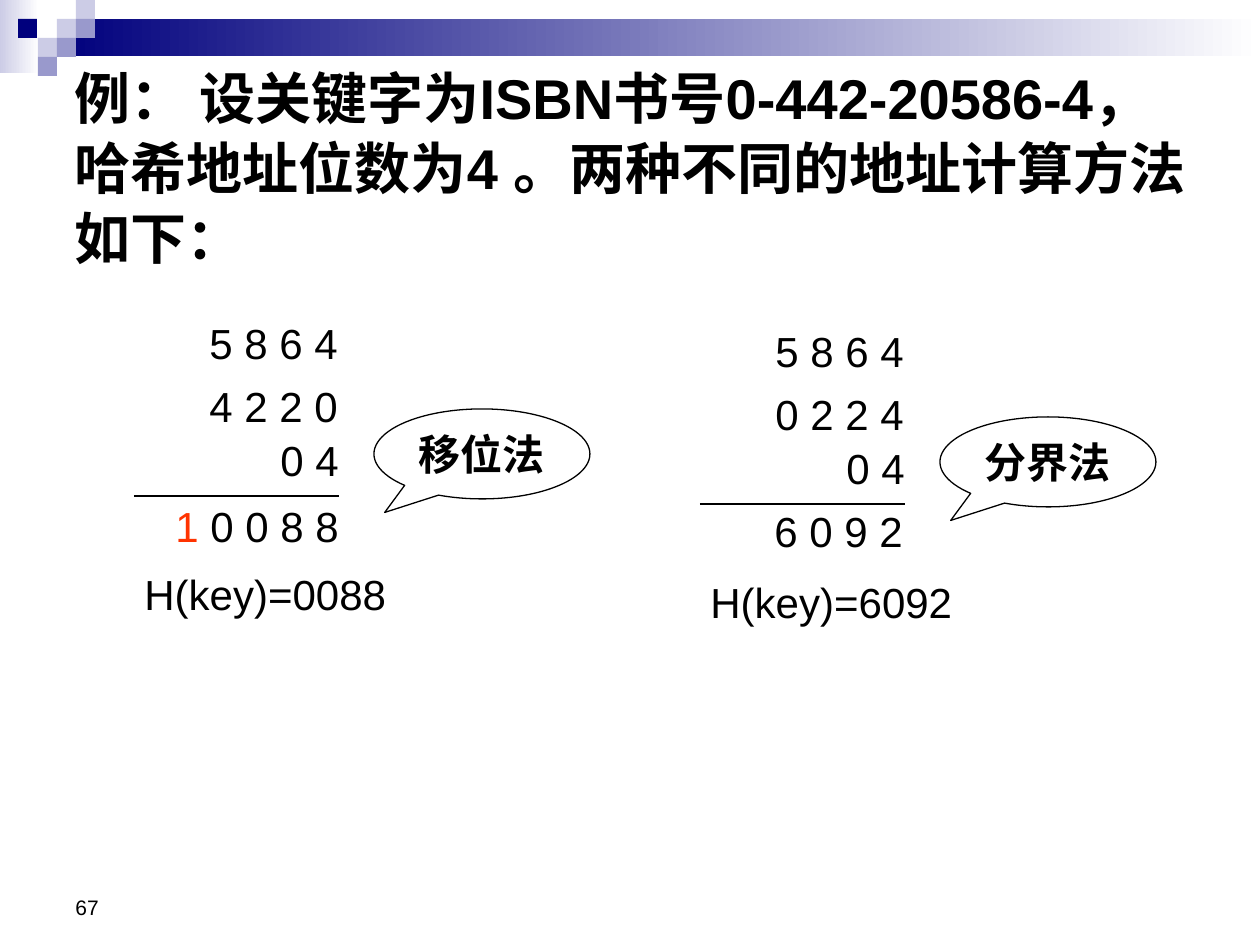
from lxml import etree
from pptx import Presentation
from pptx.dml.color import RGBColor
from pptx.enum.shapes import MSO_CONNECTOR, MSO_SHAPE
from pptx.enum.text import MSO_ANCHOR, PP_ALIGN
from pptx.oxml.ns import qn
from pptx.util import Emu, Pt

SCALE = 914400 / 126  # EMU in one px
BLACK, RED, NAVY, LILAC, LAVENDER = "000000", "FF3300", "00007D", "9999CC", "CCCCE6"


def color(value):
    return RGBColor.from_string(value)


def write(shape, runs, wrap=False, align=PP_ALIGN.LEFT, anchor=MSO_ANCHOR.TOP):
    """Fill a shape with one paragraph; runs are (text, font values, hex color)."""
    frame = shape.text_frame
    frame.word_wrap, frame.vertical_anchor = wrap, anchor
    paragraph = frame.paragraphs[0]
    paragraph.alignment = align
    for text, font_format, hex_color in runs:
        run = paragraph.add_run()
        run.text = text
        for name, value in font_format.items():
            setattr(run.font, name, value)
        run.font.color.rgb = color(hex_color)
        east_asian = etree.SubElement(run._r.get_or_add_rPr(), qn("a:ea"))
        east_asian.set("typeface", "Noto Sans CJK SC")
    return paragraph


presentation = Presentation()
presentation.slide_width, presentation.slide_height = Emu(9144000), Emu(6858000)
slide = presentation.slides.add_slide(presentation.slide_layouts[6])
shapes = slide.shapes

# Header bands and squares
header = [
    (0, 0, 39, 73, (LAVENDER, "FFFFFF")),
    (57, 19, 1203, 37, (NAVY, "FFFFFF")),
    (57, 19, 19, 19, LAVENDER),
    (76, 0, 19, 19, LAVENDER),
    (76, 19, 19, 19, LILAC),
    (38, 38, 19, 19, LAVENDER),
    (18, 19, 19, 19, NAVY),
    (57, 38, 19, 19, LILAC),
    (38, 57, 19, 19, LILAC),
]
for *box, fill in header:
    shape = shapes.add_shape(MSO_SHAPE.RECTANGLE, *[Emu(round(v * SCALE)) for v in box])
    shape.shadow.inherit = False
    shape.line.fill.background()
    if isinstance(fill, tuple):
        shape.fill.gradient()
        shape.fill.gradient_angle = 0
        for stop, hex_color, position in zip(shape.fill.gradient_stops, fill, (0, 1)):
            stop.color.rgb = color(hex_color)
            stop.position = position
    else:
        shape.fill.solid()
        shape.fill.fore_color.rgb = color(fill)

# Slide number
number_box = shapes.add_textbox(*[Emu(round(v * SCALE)) for v in (63, 861, 293, 65)])
write(number_box, [("67", {"name": "Arial", "size": Pt(12)}, BLACK)], True,
      anchor=MSO_ANCHOR.BOTTOM)

# Two worked additions with their method callouts
body = {"name": "Arial", "size": Pt(24)}
bold = {**body, "bold": True}
examples = [
    (0, 0, "4 2 2 0", [("1", body, RED), (" 0 0 8 8", body, BLACK)],
     (163, 494, 190), "H(key)=0088", "移位法"),
    (566, 8, "0 2 2 4", [("6 0 9 2", body, BLACK)],
     (762, 499, 155), "H(key)=6092", "分界法"),
]
for dx, dy, second, total, total_box, result, method in examples:
    rows = [
        (197 + dx, 311 + dy, 155, [("5 8 6 4", body, BLACK)]),
        (197 + dx, 374 + dy, 155, [(second, body, BLACK)]),
        (268 + dx, 428 + dy, 84, [("0 4", body, BLACK)]),
        (*total_box, total),
        (132 + dx, 562 + dy, 270, [(result, body, BLACK)]),
    ]
    for left, top, width, runs in rows:
        box = shapes.add_textbox(*[Emu(round(v * SCALE)) for v in (left, top, width, 63)])
        write(box, runs)

    ends = (134 + dx, 496 + dy, 339 + dx, 496 + dy)
    sum_line = shapes.add_connector(MSO_CONNECTOR.STRAIGHT,
                                    *[Emu(round(v * SCALE)) for v in ends])
    etree.SubElement(sum_line._element.spPr, qn("a:effectLst"))

    callout_box = (374 + dx, 409 + dy, 216, 90)
    callout = shapes.add_shape(MSO_SHAPE.OVAL_CALLOUT,
                               *[Emu(round(v * SCALE)) for v in callout_box])
    callout.adjustments[0], callout.adjustments[1] = -0.45, 0.65
    callout.shadow.inherit = False
    callout.fill.background()
    write(callout, [(method, bold, BLACK)], align=PP_ALIGN.CENTER,
          anchor=MSO_ANCHOR.MIDDLE)
    for outlined in (sum_line, callout):
        outlined.line.color.rgb = color(BLACK)
        outlined.line.width = Pt(0.75)

# Problem statement
statement = shapes.add_textbox(*[Emu(round(v * SCALE)) for v in (62, 55, 1147, 809)])
heading = {"name": "Arial", "size": Pt(32), "bold": True}
paragraph = write(statement, [
    ("例： 设关键字为ISBN书号0-442-20586-4，哈希地址位数为4 ", heading, BLACK),
    ("。两种不同的地址计算方法如下：", {**heading, "name": "Noto Sans CJK SC"}, BLACK),
], wrap=True)
paragraph.line_spacing = Pt(40)

presentation.save("out.pptx")
